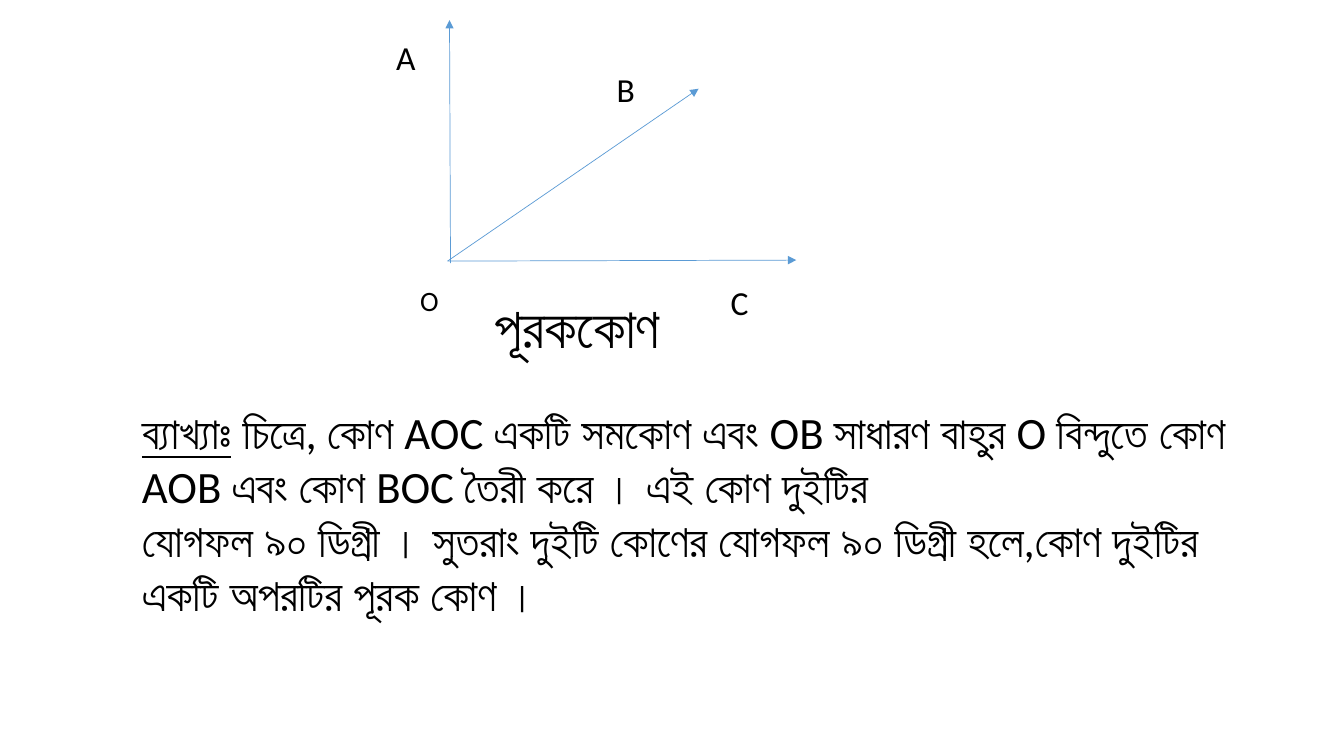
from dataclasses import dataclass

from lxml import etree
from pptx import Presentation
from pptx.dml.color import RGBColor
from pptx.enum.shapes import MSO_CONNECTOR
from pptx.enum.text import MSO_AUTO_SIZE
from pptx.oxml.ns import qn
from pptx.slide import Slide
from pptx.text.text import _Paragraph
from pptx.util import Pt

STRAIGHT = MSO_CONNECTOR.STRAIGHT
FIT_SHAPE = MSO_AUTO_SIZE.SHAPE_TO_FIT_TEXT
FONT = "Calibri"
BLACK = "000000"
RAY_BLUE = "5B9BD5"


@dataclass(frozen=True)
class Ray:
    start_x: float
    start_y: float
    end_x: float
    end_y: float


@dataclass(frozen=True)
class Span:
    text: str
    underline: bool = False


@dataclass(frozen=True)
class TextBlock:
    left: float
    top: float
    width: float
    height: float
    size: float
    paragraphs: tuple[tuple[Span, ...], ...]


RAYS = (
    Ray(319.7, 186.5, 568.8, 185.8),
    Ray(321.8, 187.9, 321.1, 14.4),
    Ray(319.7, 186.5, 499, 63.4),
)

TEXT_BLOCKS = (
    TextBlock(275.8, 23, 46, 36, 24, ((Span("A"),),)),
    TextBlock(293, 198.7, 50, 32, 20, ((Span("O"),),)),
    TextBlock(433.4, 45.4, 44, 36, 24, ((Span("B"),),)),
    TextBlock(514.8, 198, 42, 36, 24, ((Span("C"),),)),
    TextBlock(346.3, 205.2, 166, 55.4, 40, ((Span("পূরককোণ"),),)),
    TextBlock(94.3, 285.8, 809.3, 162.7, 32, (
        (
            Span("ব্যাখ্যাঃ", underline=True),
            Span(" চিত্রে, কোণ AOC একটি সমকোণ এবং OB সাধারণ বাহুর O বিন্দুতে কোণ "
                 "AOB এবং কোণ BOC তৈরী করে । এই কোণ দুইটির"),
        ),
        (
            Span("যোগফল ৯০ ডিগ্রী । সুতরাং দুইটি কোণের যোগফল ৯০ ডিগ্রী হলে,"
                 "কোণ দুইটির একটি অপরটির পূরক কোণ ।"),
        ),
    )),
)


def color(value: str) -> RGBColor:
    return RGBColor.from_string(value)


def draw_ray(page: Slide, ray: Ray) -> None:
    connector = page.shapes.add_connector(
        STRAIGHT, Pt(ray.start_x), Pt(ray.start_y), Pt(ray.end_x), Pt(ray.end_y)
    )
    connector.line.color.rgb = color(RAY_BLUE)
    connector.line.width = Pt(0.5)
    line = connector.line._get_or_add_ln()
    etree.SubElement(line, qn("a:tailEnd"), type="triangle")
    etree.SubElement(connector._element.spPr, qn("a:effectLst"))


def fill_paragraph(para: _Paragraph, spans: tuple[Span, ...], size: float) -> None:
    para.font.name = FONT
    para.font.size = Pt(size)
    para.font.color.rgb = color(BLACK)
    for span in spans:
        run = para.add_run()
        run.text = span.text
        if span.underline:
            run.font.underline = True


def draw_text(page: Slide, block: TextBlock) -> None:
    box = page.shapes.add_textbox(
        Pt(block.left), Pt(block.top), Pt(block.width), Pt(block.height)
    )
    frame = box.text_frame
    frame.word_wrap = True
    frame.auto_size = FIT_SHAPE
    for index, spans in enumerate(block.paragraphs):
        para = frame.add_paragraph() if index else frame.paragraphs[0]
        fill_paragraph(para, spans, block.size)


def main() -> None:
    deck = Presentation()
    deck.slide_width = Pt(960)
    deck.slide_height = Pt(540)
    page = deck.slides.add_slide(deck.slide_layouts[6])
    for ray in RAYS:
        draw_ray(page, ray)
    for block in TEXT_BLOCKS:
        draw_text(page, block)
    deck.save("out.pptx")


if __name__ == "__main__":
    main()
